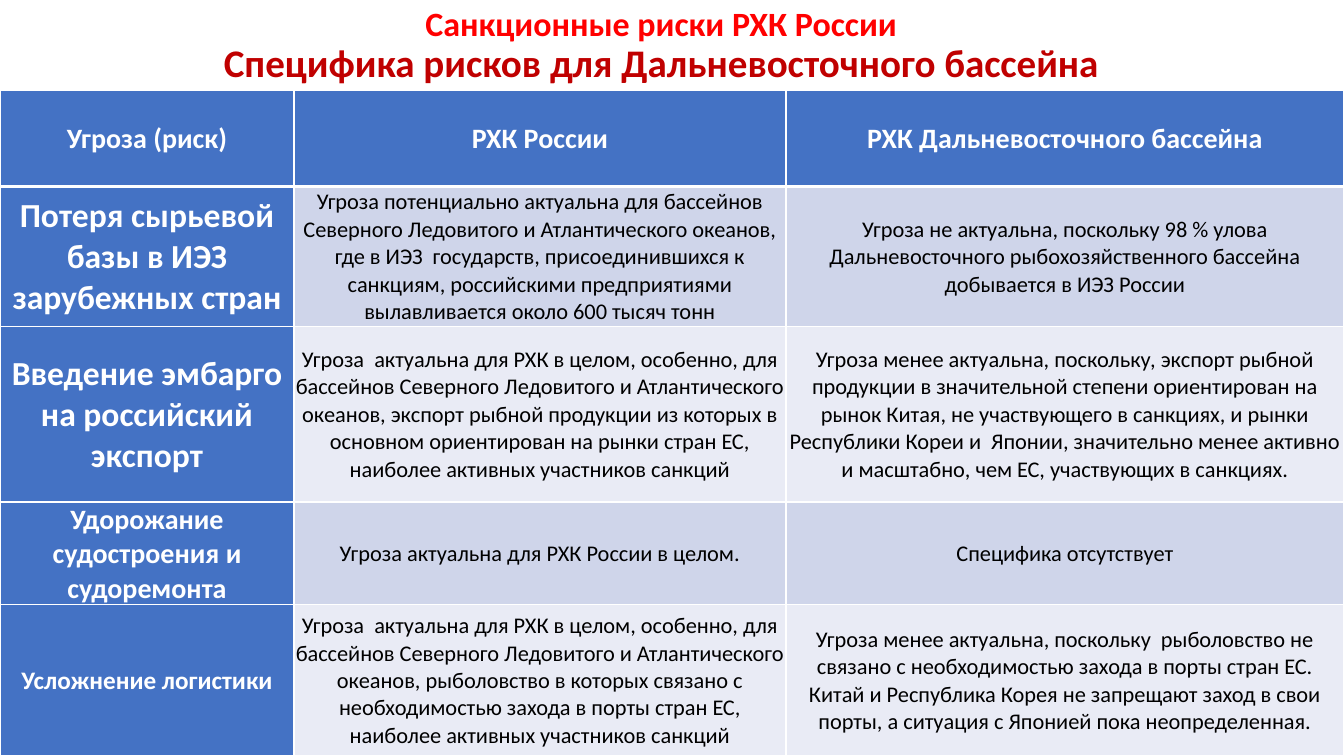
from pptx import Presentation
from pptx.dml.color import RGBColor
from pptx.enum.text import MSO_ANCHOR, PP_ALIGN
from pptx.oxml import parse_xml
from pptx.oxml.ns import nsdecls
from pptx.util import Pt

MIDDLE = MSO_ANCHOR.MIDDLE
CENTER = PP_ALIGN.CENTER

# Content
TITLE_LINES = [
    "Санкционные риски РХК России",
    "Специфика рисков для Дальневосточного бассейна",
]
HEADER = ["Угроза (риск)", "РХК России", "РХК Дальневосточного бассейна"]
RISKS = [
    [
        "Потеря сырьевой базы в ИЭЗ зарубежных стран",
        "Угроза потенциально актуальна для бассейнов Северного Ледовитого и "
        "Атлантического океанов, где в ИЭЗ  государств, присоединившихся к "
        "санкциям, российскими предприятиями вылавливается около 600 тысяч тонн",
        "Угроза не актуальна, поскольку 98 % улова Дальневосточного "
        "рыбохозяйственного бассейна добывается в ИЭЗ России",
    ],
    [
        "Введение эмбарго на российский экспорт",
        "Угроза  актуальна для РХК в целом, особенно, для бассейнов Северного "
        "Ледовитого и Атлантического океанов, экспорт рыбной продукции из которых "
        "в основном ориентирован на рынки стран ЕС, наиболее активных участников "
        "санкций",
        "Угроза менее актуальна, поскольку, экспорт рыбной продукции в значительной "
        "степени ориентирован на рынок Китая, не участвующего в санкциях, и рынки "
        "Республики Кореи и  Японии, значительно менее активно и масштабно, чем ЕС, "
        "участвующих в санкциях.",
    ],
    [
        "Удорожание судостроения и судоремонта",
        "Угроза актуальна для РХК России в целом.",
        "Специфика отсутствует",
    ],
    [
        "Усложнение логистики",
        "Угроза  актуальна для РХК в целом, особенно, для бассейнов Северного "
        "Ледовитого и Атлантического океанов, рыболовство в которых связано с "
        "необходимостью захода в порты стран ЕС, наиболее активных участников "
        "санкций",
        "Угроза менее актуальна, поскольку  рыболовство не связано с необходимостью "
        "захода в порты стран ЕС. Китай и Республика Корея не запрещают заход в свои "
        "порты, а ситуация с Японией пока неопределенная.",
    ],
]

THEME = {
    "font": "Calibri",
    "title_colors": ["FF0000", "C00000"],
    "title_sizes": [24.3, 27.9],
    "accent": "4472C4",
    "bands": ["CFD5EA", "E9EBF5"],
    "light": "FFFFFF",
    "dark": "000000",
    "header_size": 20,
    "risk_sizes": [24, 24, 20, 18],
    "body_size": 16,
}

# Layout, in points
SLIDE_WIDTH, SLIDE_HEIGHT = 960, 540
TITLE_WIDTH, TITLE_HEIGHT = 944.6, 66
TABLE_TOP = 64.8
COLUMN_WIDTHS = [210, 351.4, 398.6]
ROW_HEIGHTS = [68.4, 100, 125.4, 73.4, 108]
CELL_INSET = 0.7
RULE, HEADER_RULE = 1, 3


def style_paragraph(para, size, color, bold):
    para.alignment = CENTER
    for span in para.runs:
        span.font.name = THEME["font"]
        span.font.size = Pt(size)
        span.font.bold = bold
        span.font.color.rgb = RGBColor.from_string(color)


def add_borders(cell, top, bottom):
    properties = cell._tc.get_or_add_tcPr()
    for side, width in (("L", RULE), ("R", RULE), ("T", top), ("B", bottom)):
        properties.append(parse_xml(
            f'<a:ln{side} {nsdecls("a")} w="{Pt(width)}"><a:solidFill>'
            f'<a:srgbClr val="{THEME["light"]}"/></a:solidFill></a:ln{side}>'))


def fill_cell(cell, text, row, column):
    is_header = row == 0
    is_label = is_header or column == 0
    if is_header:
        size = THEME["header_size"]
    elif is_label:
        size = THEME["risk_sizes"][row - 1]
    else:
        size = THEME["body_size"]
    fill = THEME["accent"] if is_label else THEME["bands"][(row - 1) % 2]
    color = THEME["light"] if is_label else THEME["dark"]

    cell.text_frame.text = text
    style_paragraph(cell.text_frame.paragraphs[0], size, color, is_label)
    cell.vertical_anchor = MIDDLE
    cell.margin_left = cell.margin_right = cell.margin_top = Pt(CELL_INSET)
    cell.margin_bottom = 0
    add_borders(cell, HEADER_RULE if row == 1 else RULE,
                HEADER_RULE if is_header else RULE)
    cell.fill.solid()
    cell.fill.fore_color.rgb = RGBColor.from_string(fill)


def add_title(page):
    box = page.shapes.add_textbox(0, 0, Pt(TITLE_WIDTH), Pt(TITLE_HEIGHT))
    frame = box.text_frame
    frame.word_wrap = True
    frame.vertical_anchor = MIDDLE
    frame.margin_top = frame.margin_bottom = 0
    frame.text = "\n".join(TITLE_LINES)
    for para, size, color in zip(frame.paragraphs, THEME["title_sizes"],
                                 THEME["title_colors"]):
        para.line_spacing = 0.9
        style_paragraph(para, size, color, True)


def add_risk_table(page):
    rows = [HEADER] + RISKS
    table = page.shapes.add_table(
        len(rows), len(HEADER), 0, Pt(TABLE_TOP),
        Pt(sum(COLUMN_WIDTHS)), Pt(sum(ROW_HEIGHTS))).table
    for column, width in zip(table.columns, COLUMN_WIDTHS):
        column.width = Pt(width)
    for row, height in zip(table.rows, ROW_HEIGHTS):
        row.height = Pt(height)
    for row, texts in enumerate(rows):
        for column, text in enumerate(texts):
            fill_cell(table.cell(row, column), text, row, column)


def main():
    deck = Presentation()
    deck.slide_width, deck.slide_height = Pt(SLIDE_WIDTH), Pt(SLIDE_HEIGHT)
    page = deck.slides.add_slide(deck.slide_layouts[6])
    add_title(page)
    add_risk_table(page)
    deck.save("out.pptx")


if __name__ == "__main__":
    main()
